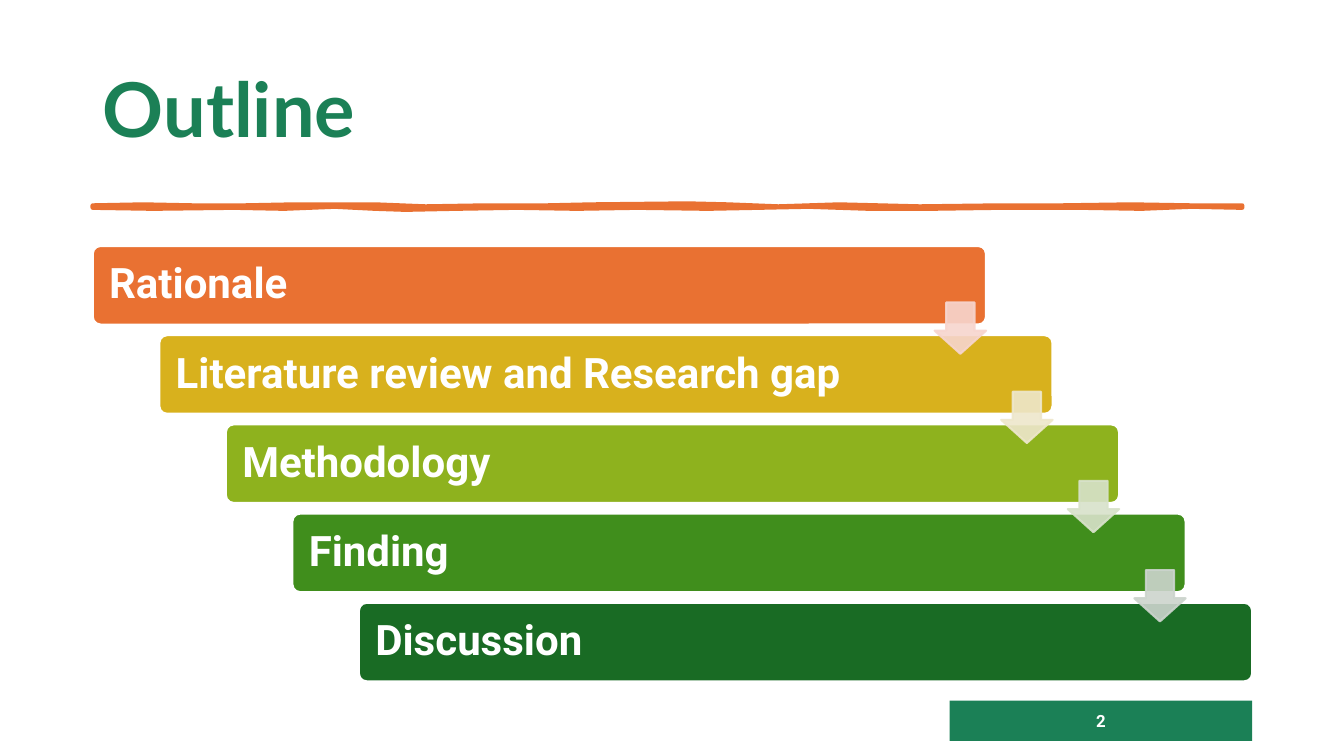
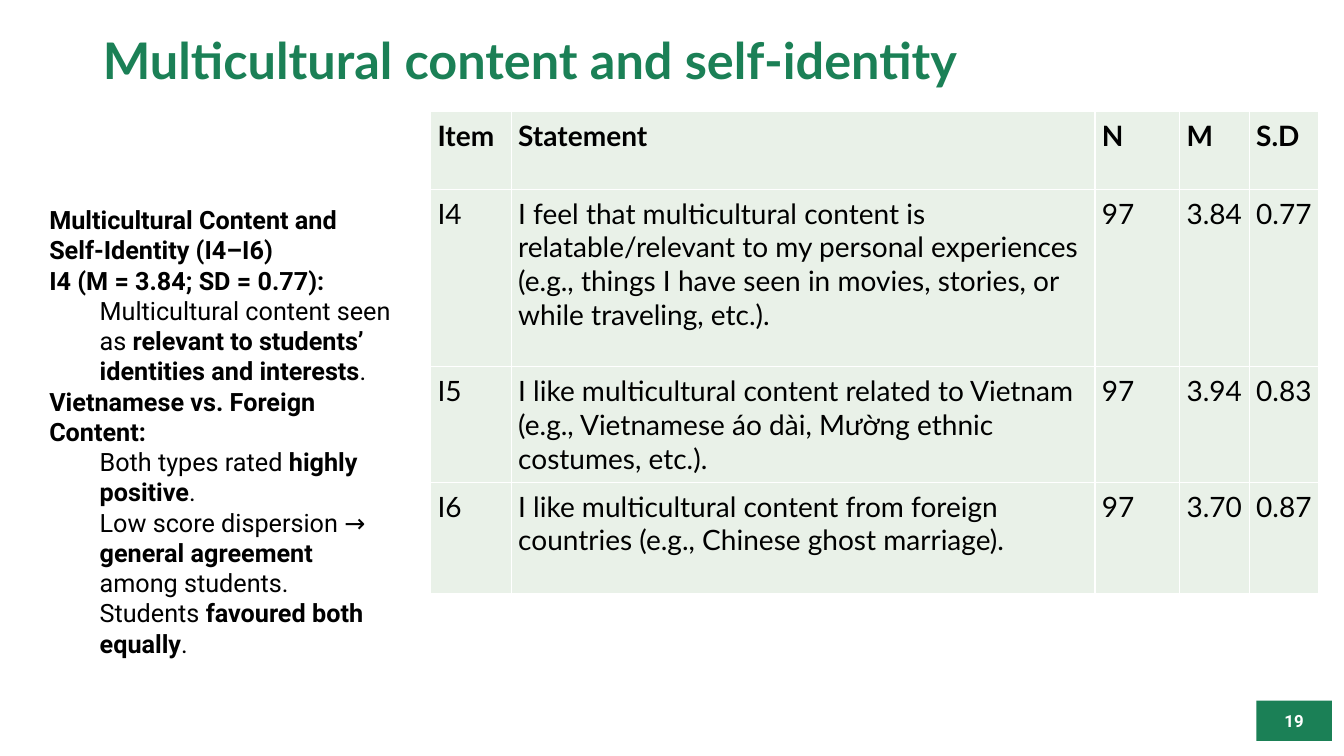
from lxml.etree import SubElement
from pptx import Presentation
from pptx.dml.color import RGBColor
from pptx.enum.shapes import MSO_SHAPE
from pptx.enum.text import MSO_ANCHOR, MSO_AUTO_SIZE, PP_ALIGN
from pptx.oxml.ns import qn
from pptx.util import Inches, Pt

GREEN, ORANGE, WHITE, BLACK, PALE = "1B8056", "E97132", "FFFFFF", "000000", "E9F1E8"
HEAD_FONT, BODY_FONT = "Lato", "Roboto"

STEPS = [
    ("Rationale", ORANGE, "F7D5CE"),
    ("Literature review and Research gap", "D8B11D", "EEE7CB"),
    ("Methodology", "8EB21E", "D8E2CA"),
    ("Finding", "408E1C", "CCD4CD"),
    ("Discussion", "196B24", None),
]
RULE_TOP = [(0, 0), (0.5, -0.01), (1, 0), (1.5, 0), (2, -0.01), (2.8, -0.01), (3.3, 0.01),
            (3.9, 0), (4.5, 0), (4.95, -0.01), (5.9, -0.02), (6.3, -0.01), (6.8, 0.01),
            (7.4, -0.01), (8.2, 0.01), (9, 0), (9.6, 0), (10.3, -0.01), (10.9, 0), (11.4, 0)]
RULE_BOTTOM = [(11.4, 0.02), (10.9, 0.01), (10.4, 0.03), (9.8, 0.02), (9, 0.02), (8.3, 0.03),
               (7.7, 0.03), (7.1, 0.01), (6.6, 0.02), (6.1, 0.03), (5.4, 0.02), (4.8, 0.03),
               (4.2, 0.02), (3.6, 0.03), (3.1, 0.04), (2.8, 0.03), (2.4, 0.01), (1.9, 0.03),
               (1.4, 0.02), (0.6, 0.03), (0, 0.02)]
ITEMS = [
    ["Item", "Statement", "N", "M", "S.D"],
    ["I4", "I feel that multicultural content is relatable/relevant to my personal experiences "
     "(e.g., things I have seen in movies, stories, or while traveling, etc.).", "97", "3.84", "0.77"],
    ["I5", "I like multicultural content related to Vietnam (e.g., Vietnamese áo dài, "
     "Mường ethnic costumes, etc.).", "97", "3.94", "0.83"],
    ["I6", "I like multicultural content from foreign countries (e.g., Chinese ghost marriage).",
     "97", "3.70", "0.87"],
]
FINDINGS = [
    (0, [("Multicultural Content and Self-Identity (I4–I6)", True)]),
    (0, [("I4 (M = 3.84; SD = 0.77):", True)]),
    (1, [("Multicultural content seen as ", False),
         ("relevant to students’ identities and interests", True), (".", False)]),
    (0, [("Vietnamese vs. Foreign Content:", True)]),
    (1, [("Both types rated ", False), ("highly positive", True), (".", False)]),
    (1, [("Low score dispersion → ", False), ("general agreement", True),
         (" among students.", False)]),
    (1, [("Students ", False), ("favoured both equally", True), (".", False)]),
]


def rgb(color):
    return RGBColor.from_string(color)


def inches(*values):
    return [Inches(v) for v in values]


def style(r, size, font, color, bold=True):
    r.font.size, r.font.name, r.font.bold = Pt(size), font, bold
    r.font.color.rgb = rgb(color)


def add_box(slide, kind, box, fill, line=None, width=1.5):
    sp = slide.shapes.add_shape(kind, *inches(*box))
    paint(sp, fill, line, width)
    return sp


def paint(sp, fill, line, width):
    sp.shadow.inherit = False
    sp.fill.solid()
    sp.fill.fore_color.rgb = rgb(fill)
    if line:
        sp.line.color.rgb = rgb(line)
        sp.line.width = Pt(width)
    else:
        sp.line.fill.background()


def write(sp, text, size, align):
    tf = sp.text_frame
    tf.word_wrap = True
    tf.vertical_anchor = MSO_ANCHOR.MIDDLE
    tf.text = text
    p = tf.paragraphs[0]
    p.alignment = align
    style(p.runs[0], size, BODY_FONT, WHITE)
    return tf


def start_slide(prs, title, title_box, size, number, number_box):
    slide = prs.slides.add_slide(prs.slide_layouts[5])
    sp = slide.shapes.title
    sp.left, sp.top, sp.width, sp.height = inches(*title_box)
    tf = sp.text_frame
    tf.text = title
    tf.word_wrap = True
    tf.auto_size = MSO_AUTO_SIZE.NONE
    tf.vertical_anchor = MSO_ANCHOR.MIDDLE
    p = tf.paragraphs[0]
    p.alignment, p.line_spacing = PP_ALIGN.JUSTIFY, 0.9
    style(p.runs[0], size, HEAD_FONT, GREEN)
    footer = add_box(slide, MSO_SHAPE.RECTANGLE, number_box, GREEN)
    write(footer, number, 12, PP_ALIGN.CENTER)
    return slide


def add_rule(slide, left, top):
    points = [inches(left + x, top + y) for x, y in RULE_TOP + RULE_BOTTOM]
    builder = slide.shapes.build_freeform(*points[0], scale=1.0)
    builder.add_line_segments(points[1:], close=True)
    sp = builder.convert_to_shape()
    paint(sp, ORANGE, ORANGE, 3.25)
    SubElement(sp.line._get_or_add_ln(), qn("a:round"))


def add_staircase(slide, left, top, width, height):
    bar_w, bar_h, arrow = 8.86, 0.78, 0.51
    dx = (width - bar_w) / (len(STEPS) - 1)
    dy = (height - bar_h) / (len(STEPS) - 1)
    for i, (text, fill, _) in enumerate(STEPS):
        bar = add_box(slide, MSO_SHAPE.ROUNDED_RECTANGLE,
                      (left + i * dx, top + i * dy, bar_w, bar_h), fill, WHITE)
        bar.adjustments[0] = 0.1
        tf = write(bar, text, 30, PP_ALIGN.LEFT)
        tf.margin_left = tf.margin_right = Inches(0.14)
        tf.paragraphs[0].line_spacing = 0.9
    for i, (_, _, tint) in enumerate(STEPS[:-1]):
        box = (left + i * dx + bar_w - arrow, top + i * dy + 0.56, arrow, arrow)
        sp = add_box(slide, MSO_SHAPE.DOWN_ARROW, box, tint, tint)
        sp.adjustments[0], sp.adjustments[1] = 0.45, 0.55
        sp.adjustments[0], sp.adjustments[1] = 0.55, 0.45
        for color in sp._element.spPr.iter(qn("a:srgbClr")):
            SubElement(color, qn("a:alpha"), val="90000")


def format_cell(cell, text, bold):
    cell.text = text
    style(cell.text_frame.paragraphs[0].runs[0], 20, HEAD_FONT, BLACK, bold)
    cell.margin_left = cell.margin_right = Inches(0.07)
    cell.margin_top = cell.margin_bottom = Inches(0.07)
    tc_pr = cell._tc.get_or_add_tcPr()
    for side in ("lnL", "lnR", "lnT", "lnB"):
        ln = SubElement(tc_pr, qn(f"a:{side}"), w=str(Pt(1)))
        SubElement(SubElement(ln, qn("a:solidFill")), qn("a:srgbClr"), val=WHITE)
    cell.fill.solid()
    cell.fill.fore_color.rgb = rgb(PALE)


def add_items_table(slide, left, top):
    widths, heights = (0.8, 5.79, 0.84, 0.69, 0.69), (0.77, 1.76, 1.14, 1.1)
    table = slide.shapes.add_table(len(heights), len(widths), *inches(
        left, top, sum(widths), sum(heights))).table
    table.first_row = table.horz_banding = False
    for column, width in zip(table.columns, widths):
        column.width = Inches(width)
    for i, (row, height) in enumerate(zip(table.rows, heights)):
        row.height = Inches(height)
        for cell, text in zip(row.cells, ITEMS[i]):
            format_cell(cell, text, i == 0)


def add_findings(slide, box):
    tf = slide.shapes.add_textbox(*inches(*box)).text_frame
    tf.word_wrap = True
    for i, (level, parts) in enumerate(FINDINGS):
        p = tf.add_paragraph() if i else tf.paragraphs[0]
        p.level = level
        if level:
            p_pr = p._p.get_or_add_pPr()
            p_pr.set("marL", str(Inches(0.5)))
            p_pr.set("indent", "0")
        for text, bold in parts:
            r = p.add_run()
            r.text = text
            style(r, 18, BODY_FONT, BLACK, bold)


def outline_slide(prs):
    slide = start_slide(prs, "Outline", (0.92, 0.4, 11.5, 1.45), 54, "2", (9.42, 6.95, 3, 0.4))
    add_rule(slide, 0.92, 2.04)
    add_staircase(slide, 0.92, 2.44, 11.5, 4.32)


def identity_slide(prs):
    slide = start_slide(prs, "Multicultural content and self-identity",
                        (0.92, 0.27, 11.5, 0.72), 36, "19", (12.46, 6.95, 0.75, 0.4))
    add_items_table(slide, 4.27, 1.11)
    add_findings(slide, (0.39, 1.98, 3.59, 4.64))


def main():
    prs = Presentation()
    prs.slide_width, prs.slide_height = inches(13.33, 7.5)
    outline_slide(prs)
    identity_slide(prs)
    prs.save("out.pptx")


if __name__ == "__main__":
    main()
